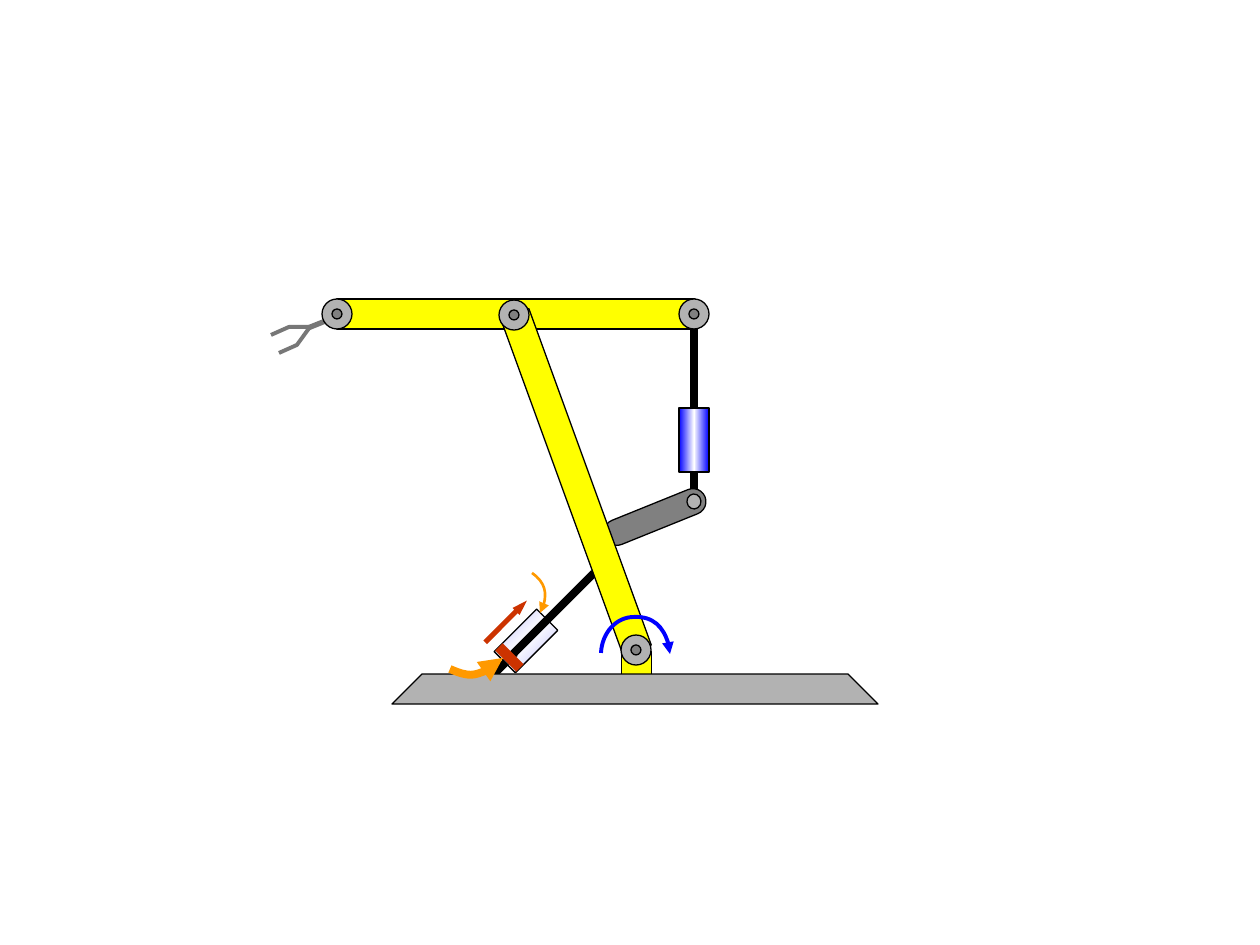
from copy import deepcopy
from dataclasses import dataclass

import pptx
import pptx.dml.color
import pptx.enum.shapes
import pptx.oxml
import pptx.oxml.ns
import pptx.util
from lxml import etree

PX = 914400 / 126
SHAPE = pptx.enum.shapes.MSO_SHAPE
qn = pptx.oxml.ns.qn

BLACK, YELLOW, SILVER, GRAY = "000000", "FFFF00", "B2B2B2", "808080"
BLUE, WHITE, RED, ORANGE, GRIPPER = "0000FF", "FFFFFF", "CC3300", "FF9900", "777777"

Point = tuple[int, int]


@dataclass
class Box:
    left: int
    top: int
    width: int
    height: int
    rotation: float = 0


@dataclass
class Rod:
    start: Point
    end: Point
    color: str = BLACK
    weight: float = 4.5


@dataclass
class FlowArrow:
    """A cubic curve; arrow_end names the line end that has the triangle."""
    points: list[Point]
    color: str
    weight: float
    arrow_end: str = "tailEnd"


def emu(length: int) -> pptx.util.Emu:
    return pptx.util.Emu(round(length * PX))


def rgb(color: str) -> pptx.dml.color.RGBColor:
    return pptx.dml.color.RGBColor.from_string(color)


def set_line(item, color: str, weight: float) -> None:
    item.line.color.rgb = rgb(color)
    item.line.width = pptx.util.Pt(weight)


def draw_shape(slide, kind, box: Box, fill: str, outlined: bool = True):
    shape = slide.shapes.add_shape(
        kind, emu(box.left), emu(box.top), emu(box.width), emu(box.height))
    shape.rotation = box.rotation
    shape.shadow.inherit = False
    shape.fill.solid()
    shape.fill.fore_color.rgb = rgb(fill)
    if outlined:
        set_line(shape, BLACK, 0.75)
    else:
        shape.line.fill.background()
    return shape


def draw_cylinder(slide, box: Box, opacity: int = 100) -> None:
    shape = draw_shape(slide, SHAPE.RECTANGLE, box, BLUE)
    shape.fill.gradient()
    shape.fill.gradient_angle = 0
    stop_list = shape._element.spPr.find(qn("a:gradFill")).find(qn("a:gsLst"))
    stop_list.append(deepcopy(stop_list[0]))
    colors = (BLUE, WHITE, BLUE)
    for stop, position, color in zip(shape.fill.gradient_stops, (0, 0.5, 1), colors):
        stop.position = position
        stop.color.rgb = rgb(color)
    if opacity < 100:
        for color_element in stop_list.iter(qn("a:srgbClr")):
            etree.SubElement(color_element, qn("a:alpha"), val=str(opacity * 1000))


def draw_rod(slide, rod: Rod) -> None:
    connector = slide.shapes.add_connector(
        pptx.enum.shapes.MSO_CONNECTOR.STRAIGHT,
        *(emu(value) for value in rod.start + rod.end))
    set_line(connector, rod.color, rod.weight)
    etree.SubElement(connector._element.spPr, qn("a:effectLst"))


def draw_outline(slide, points: list[Point], closed: bool, color: str, weight: float):
    builder = slide.shapes.build_freeform(*points[0], scale=PX)
    builder.add_line_segments(points[1:], close=closed)
    shape = builder.convert_to_shape()
    shape.shadow.inherit = False
    shape.fill.background()
    set_line(shape, color, weight)
    return shape


def draw_flow_arrow(slide, arrow: FlowArrow) -> None:
    shape = draw_outline(slide, arrow.points, False, arrow.color, arrow.weight)
    # Every three line segments become one cubic segment
    segments = list(shape._element.spPr.iter(qn("a:lnTo")))
    outline = segments[0].getparent()
    for first in range(0, len(segments), 3):
        curve = etree.SubElement(outline, qn("a:cubicBezTo"))
        for segment in segments[first:first + 3]:
            curve.append(segment[0])
            outline.remove(segment)
    line = shape._element.spPr.find(qn("a:ln"))
    etree.SubElement(line, qn(f"a:{arrow.arrow_end}"), type="triangle")


def draw_joint(slide, center: Point) -> None:
    for diameter, fill in ((30, SILVER), (10, GRAY)):
        left, top = (value - diameter // 2 for value in center)
        draw_shape(slide, SHAPE.OVAL, Box(left, top, diameter, diameter), fill)


def build_slide(slide) -> None:
    # Base and lower cylinder
    draw_shape(slide, SHAPE.RECTANGLE, Box(625, 648, 23, 30, 90), YELLOW)
    draw_rod(slide, Rod((515, 653), (488, 680)))
    draw_cylinder(slide, Box(511, 611, 30, 60, 45), opacity=30)
    base = draw_outline(
        slide, [(422, 674), (848, 674), (878, 704), (392, 704)], True, BLACK, 0.75)
    base.fill.solid()
    base.fill.fore_color.rgb = rgb(SILVER)

    # Piston rods
    for rod in (
        Rod((594, 573), (510, 657)),
        Rod((499, 647), (520, 668), RED, 6),
        Rod((694, 457), (694, 508)),
        Rod((694, 319), (694, 418)),
        Rod((679, 418), (709, 418), GRAY, 6),
    ):
        draw_rod(slide, rod)

    # Gripper
    fingers = [(271, 335), (289, 327), (310, 327), (297, 345), (279, 353)]
    draw_outline(slide, fingers, False, GRIPPER, 2.25)
    draw_rod(slide, Rod((308, 328), (333, 318), GRIPPER, 3))

    # Upper arm
    draw_shape(slide, SHAPE.RECTANGLE, Box(337, 299, 358, 30), YELLOW)
    for center in ((337, 314), (694, 314)):
        draw_joint(slide, center)

    # Link to the upper cylinder
    link = draw_shape(slide, SHAPE.ROUNDED_RECTANGLE, Box(601, 504, 108, 26, 338), GRAY)
    link.adjustments[0] = 0.5
    draw_shape(slide, SHAPE.OVAL, Box(687, 494, 14, 15, 355.6), SILVER)

    # Lower arm
    draw_shape(slide, SHAPE.RECTANGLE, Box(397, 467, 358, 30, 70), YELLOW)
    for center in ((514, 315), (636, 650)):
        draw_joint(slide, center)
    draw_cylinder(slide, Box(679, 408, 30, 64))

    # Fluid flow and motion
    for arrow in (
        FlowArrow([(532, 573), (546, 583), (548, 601), (540, 613)], ORANGE, 1.5),
        FlowArrow([(450, 669), (470, 678), (492, 673), (503, 658)], ORANGE, 4.5),
        FlowArrow([(670, 654), (669, 632), (653, 616), (634, 617),
                   (616, 617), (602, 633), (601, 653)], BLUE, 2.25, "headEnd"),
    ):
        draw_flow_arrow(slide, arrow)
    thrust = draw_shape(slide, SHAPE.UP_ARROW, Box(501, 592, 10, 59, 45), RED, False)
    thrust.adjustments[0] = 0.5
    thrust.adjustments[1] = 1.52


def main() -> None:
    presentation = pptx.Presentation()
    presentation.slide_width = emu(1260)
    presentation.slide_height = emu(945)
    build_slide(presentation.slides.add_slide(presentation.slide_layouts[6]))
    presentation.save("out.pptx")


if __name__ == "__main__":
    main()
